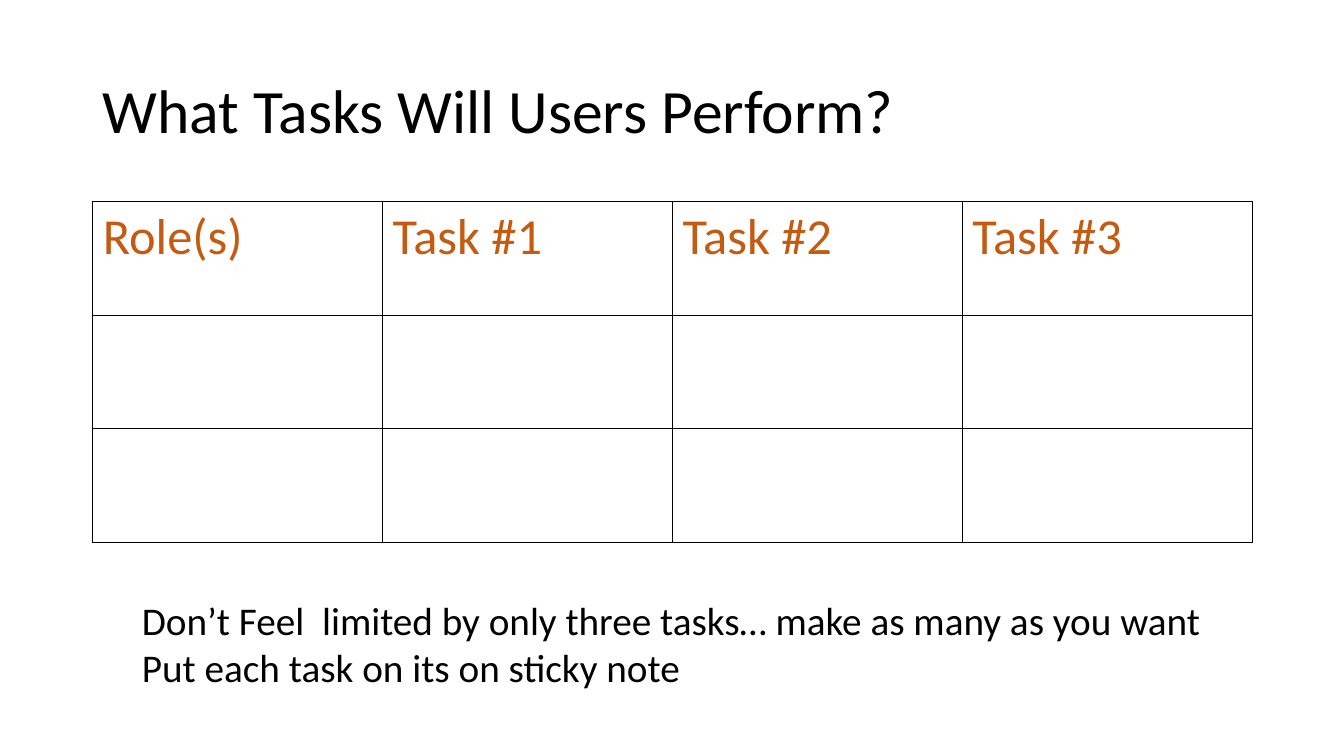
from lxml import etree
from pptx import Presentation
from pptx.dml.color import RGBColor
from pptx.enum.text import MSO_ANCHOR, PP_ALIGN
from pptx.oxml.ns import qn
from pptx.util import Inches, Pt

BLACK = RGBColor(0x00, 0x00, 0x00)
ORANGE = RGBColor(0xC5, 0x5A, 0x11)
LEFT = PP_ALIGN.LEFT
MIDDLE = MSO_ANCHOR.MIDDLE
FONT = "Calibri"


def write(frame, text, size, color=BLACK, spacing=1.0):
    frame.word_wrap = True
    frame.text = text
    for para in frame.paragraphs:
        para.alignment = LEFT
        para.line_spacing = spacing
        for run in para.runs:
            run.font.name = FONT
            run.font.size = Pt(size)
            run.font.color.rgb = color


def border(cell, color, width):
    props = cell._tc.get_or_add_tcPr()
    for side in ("lnL", "lnR", "lnT", "lnB"):
        line = etree.SubElement(props, qn("a:" + side), w=str(Pt(width)))
        fill = etree.SubElement(line, qn("a:solidFill"))
        etree.SubElement(fill, qn("a:srgbClr"), val=str(color))


deck = Presentation()
deck.slide_width = Inches(13.33)
deck.slide_height = Inches(7.5)
slide = deck.slides.add_slide(deck.slide_layouts[5])

# Title
title = slide.shapes.title
title.left, title.top = Inches(0.92), Inches(0.4)
title.width, title.height = Inches(11.5), Inches(1.45)
title.text_frame.vertical_anchor = MIDDLE
write(title.text_frame, "What Tasks Will Users Perform?", 44, spacing=0.9)

# Task table: one header row, two rows to fill in
heads = ["Role(s)", "Task #1", "Task #2", "Task #3"]
table = slide.shapes.add_table(3, len(heads), Inches(0.92), Inches(2),
                               Inches(11.5), Inches(3.38)).table
table.first_row = False
table.horz_banding = False
for cell in table.iter_cells():
    border(cell, BLACK, 1)
    cell.fill.background()
for col, head in enumerate(heads):
    write(table.cell(0, col).text_frame, head, 36, ORANGE)

# Advice below the table
advice = slide.shapes.add_textbox(Inches(1.31), Inches(5.87),
                                  Inches(10.9), Inches(1.04))
write(advice.text_frame,
      "Don’t Feel  limited by only three tasks… make as many as you want\n"
      "Put each task on its on sticky note", 28)

deck.save("out.pptx")
